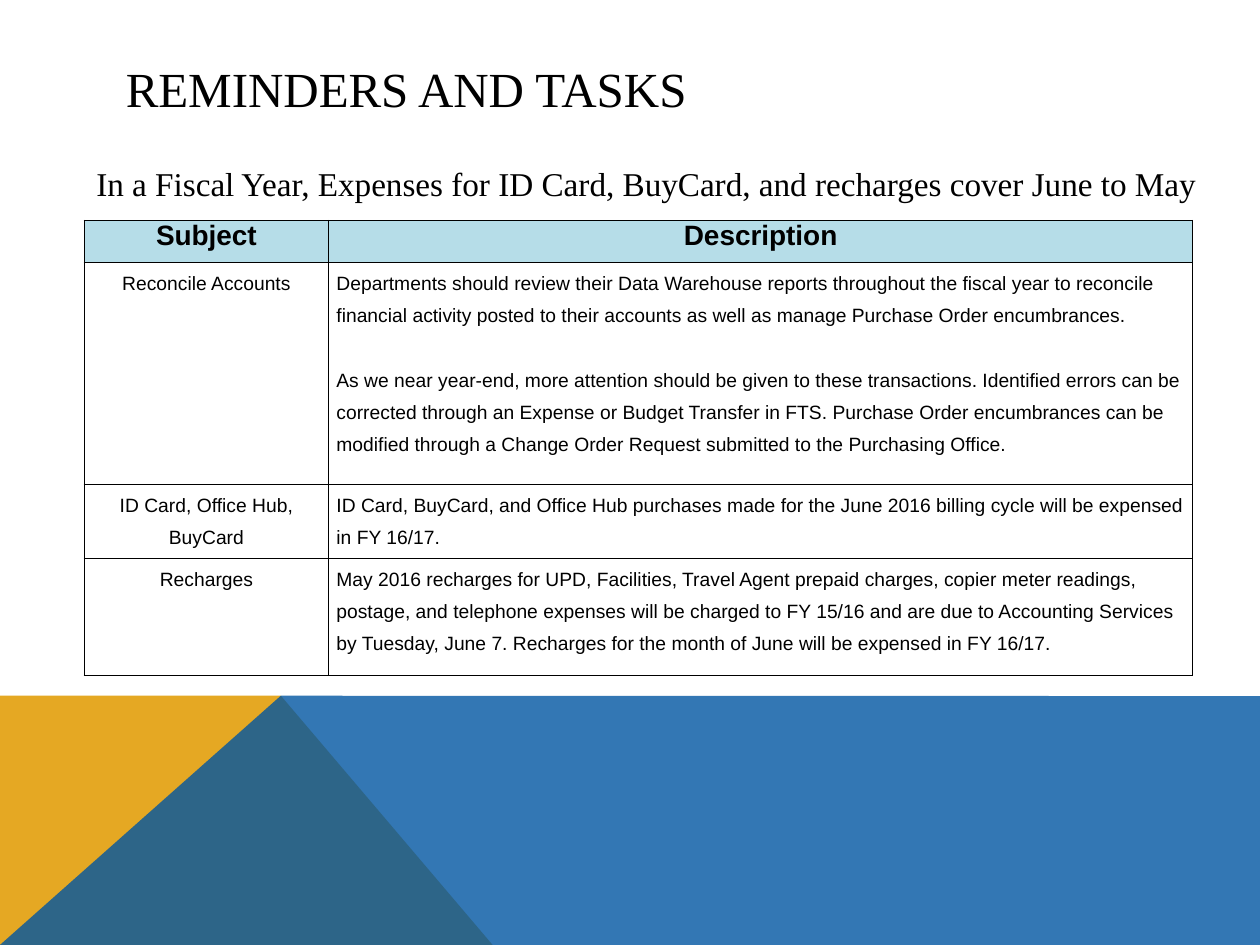
from typing import NamedTuple

from lxml.etree import SubElement
from pptx import Presentation
from pptx.dml.color import RGBColor
from pptx.enum.text import MSO_ANCHOR as Anchor, PP_ALIGN as Align
from pptx.oxml.ns import qn
from pptx.util import Pt

SERIF, SANS = "Times New Roman", "Arial"
BLACK, HEADER_FILL = "000000", "B6DDE8"
GOLD, BLUE = "E5A823", "0055A2"


class Band(NamedTuple):
    points: list[tuple[float, float]]
    color: str
    opacity: int


class Label(NamedTuple):
    text: str
    left: float
    top: float
    width: float
    height: float
    size: float
    anchor: Anchor
    wrap: bool


class Row(NamedTuple):
    subject: str
    description: list[str]
    height: float


BANDS = [
    Band([(0, 540), (0, 397.6), (160.5, 397.6), (281.5, 540)], GOLD, 100),
    Band([(0, 540), (160.5, 397.6), (720, 397.8), (720, 540)], BLUE, 80),
]
TITLE = Label("REMINDERS AND TASKS", 64.8, 28.8, 592, 43.2, 28, Anchor.MIDDLE, True)
SUBTITLE = Label(
    "In a Fiscal Year, Expenses for ID Card, BuyCard, and recharges cover June to May",
    48, 90, 643, 30, 19, Anchor.TOP, False)

TABLE_LEFT, TABLE_TOP = 48.2, 126
COLUMNS = [139.6, 493.8]
PARAGRAPH_GAP = 18.4
HEADER = Row("Subject", ["Description"], 24)
ROWS = [
    Row("Reconcile Accounts", [
        "Departments should review their Data Warehouse reports throughout the fiscal year "
        "to reconcile financial activity posted to their accounts as well as manage "
        "Purchase Order encumbrances.",
        "As we near year-end, more attention should be given to these transactions. "
        "Identified errors can be corrected through an Expense or Budget Transfer in FTS. "
        "Purchase Order encumbrances can be modified through a Change Order Request "
        "submitted to the Purchasing Office.",
    ], 126.9),
    Row("ID Card, Office Hub, BuyCard", [
        "ID Card, BuyCard, and Office Hub purchases made for the June 2016 billing cycle "
        "will be expensed in FY 16/17.",
    ], 42.2),
    Row("Recharges", [
        "May 2016 recharges for UPD, Facilities, Travel Agent prepaid charges, copier meter "
        "readings, postage, and telephone expenses will be charged to FY 15/16 and are due "
        "to Accounting Services by Tuesday, June 7. Recharges for the month of June will be "
        "expensed in FY 16/17.",
    ], 66.9),
]


def rgb(color: str) -> RGBColor:
    return RGBColor.from_string(color)


def add_run(p, text: str, font: str, size: float, bold: bool = False) -> None:
    r = p.add_run()
    r.text = text
    r.font.name, r.font.size, r.font.bold = font, Pt(size), bold
    r.font.color.rgb = rgb(BLACK)


def draw_band(s, band: Band) -> None:
    points = [(Pt(x), Pt(y)) for x, y in band.points]
    builder = s.shapes.build_freeform(*points[0])
    builder.add_line_segments(points[1:], close=True)
    sp = builder.convert_to_shape()
    sp.shadow.inherit = False
    sp.line.fill.background()
    sp.fill.solid()
    sp.fill.fore_color.rgb = rgb(band.color)
    if band.opacity < 100:
        color = sp.fill._xPr.find(f".//{qn('a:srgbClr')}")
        SubElement(color, qn("a:alpha"), val=str(band.opacity * 1000))


def draw_label(s, label: Label) -> None:
    sp = s.shapes.add_textbox(
        Pt(label.left), Pt(label.top), Pt(label.width), Pt(label.height))
    tf = sp.text_frame
    tf.word_wrap, tf.vertical_anchor = label.wrap, label.anchor
    add_run(tf.paragraphs[0], label.text, SERIF, label.size)


def add_borders(cell) -> None:
    tc_pr = cell._tc.get_or_add_tcPr()
    for side in "LRTB":
        ln = SubElement(tc_pr, qn(f"a:ln{side}"), w=str(Pt(1)))
        fill = SubElement(ln, qn("a:solidFill"))
        SubElement(fill, qn("a:srgbClr"), val=BLACK)


def fill_cell(cell, paragraphs: list[str], align: Align, header: bool) -> None:
    cell.margin_left = cell.margin_right = Pt(4.5)
    cell.margin_top = cell.margin_bottom = Pt(0)
    add_borders(cell)
    if header:
        cell.fill.solid()
        cell.fill.fore_color.rgb = rgb(HEADER_FILL)
    else:
        cell.fill.background()
    tf = cell.text_frame
    for i, text in enumerate(paragraphs):
        p = tf.add_paragraph() if i else tf.paragraphs[0]
        p.alignment = align
        if not header:
            p.line_spacing = 1.5
        if i:
            p.space_before = Pt(PARAGRAPH_GAP)
        add_run(p, text, SANS, 16 if header else 11, header)


def draw_table(s) -> None:
    rows = [HEADER, *ROWS]
    table = s.shapes.add_table(
        len(rows), len(COLUMNS), Pt(TABLE_LEFT), Pt(TABLE_TOP),
        Pt(sum(COLUMNS)), Pt(sum(row.height for row in rows))).table
    table.first_row = table.horz_banding = False
    for column, width in zip(table.columns, COLUMNS):
        column.width = Pt(width)
    for i, row in enumerate(rows):
        header = row is HEADER
        table.rows[i].height = Pt(row.height)
        fill_cell(table.cell(i, 0), [row.subject], Align.CENTER, header)
        fill_cell(table.cell(i, 1), row.description,
                  Align.CENTER if header else Align.LEFT, header)


def main() -> None:
    prs = Presentation()
    prs.slide_width, prs.slide_height = Pt(720), Pt(540)
    s = prs.slides.add_slide(prs.slide_layouts[6])
    for band in BANDS:
        draw_band(s, band)
    draw_label(s, TITLE)
    draw_table(s)
    draw_label(s, SUBTITLE)
    prs.save("out.pptx")


if __name__ == "__main__":
    main()
